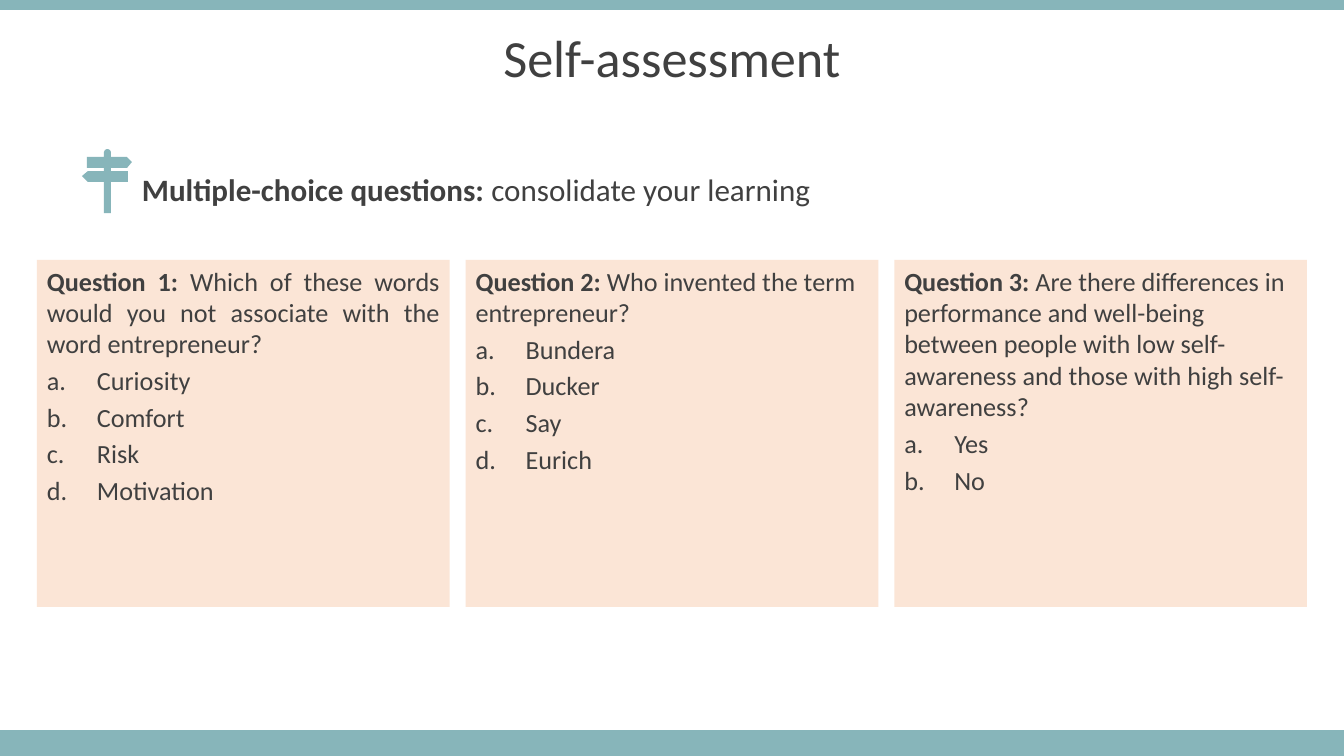
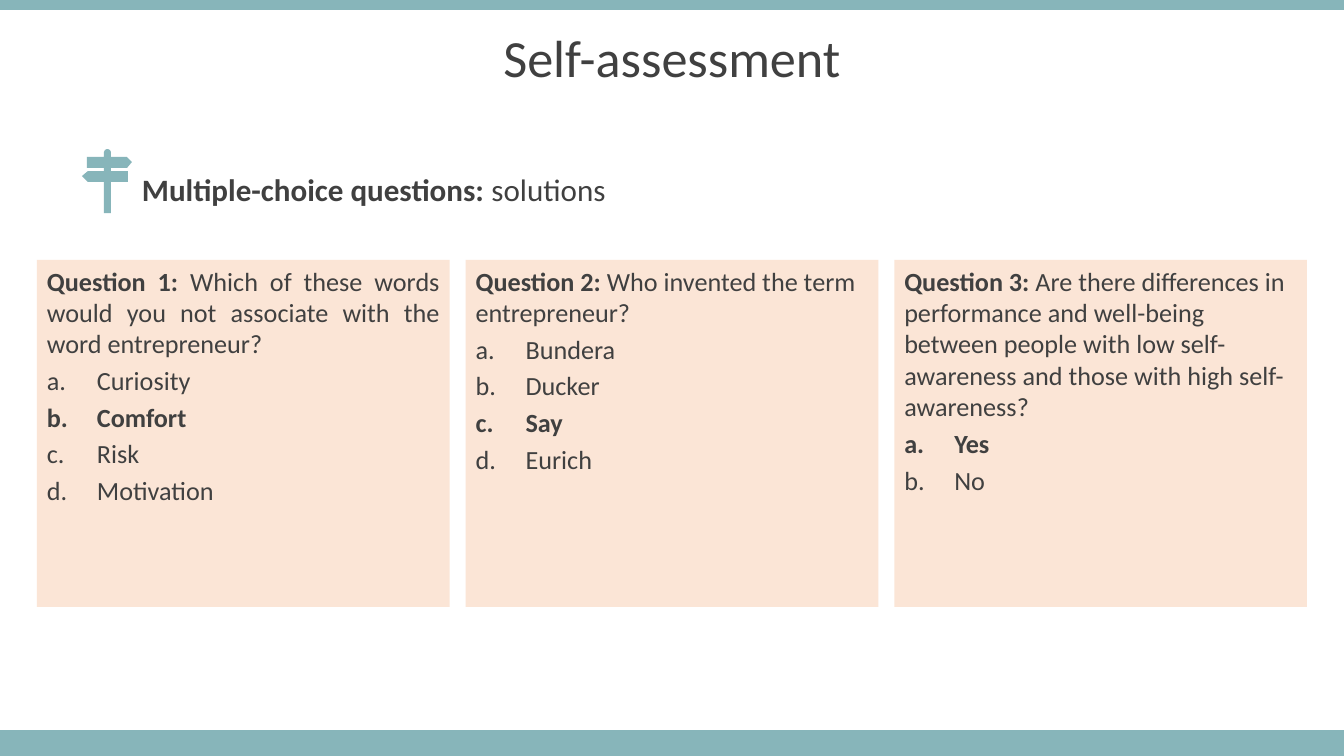
from lxml.etree import SubElement
from pptx import Presentation
from pptx.dml.color import RGBColor
from pptx.enum.shapes import MSO_SHAPE
from pptx.enum.text import MSO_ANCHOR as Anchor, PP_ALIGN as Align
from pptx.oxml.ns import qn
from pptx.util import Emu, Pt

# Shared look
SLIDE_WIDTH, SLIDE_HEIGHT = 1344, 756
EMU_PER_PX = 12192000 / SLIDE_WIDTH
TEAL = RGBColor(0x87, 0xB5, 0xBA)
PEACH = RGBColor(0xFB, 0xE5, 0xD6)
CHARCOAL = RGBColor(0x40, 0x40, 0x40)
FONT = "Calibri"
TITLE_SIZE, HEADING_SIZE, BODY_SIZE = 37.3, 22.2, 18.7
OPTION_INDENT = 50
CARD_GAP = 16

# Signpost outline, relative to its top left corner
SIGNPOST = [
    (22, 3), (23, 1), (25, 0), (26, 0), (28, 1), (29, 3),
    (29, 8), (45, 8), (50, 13), (45, 19), (29, 19),
    (29, 22), (46, 22), (46, 33), (29, 33), (29, 64),
    (22, 64), (22, 33), (6, 33), (0, 27), (6, 22),
    (22, 22), (22, 19), (5, 19), (5, 8), (22, 8),
]

# Question text, options, index of the right answer, alignment
QUESTIONS = [
    ("Which of these words would you not associate with the word entrepreneur?",
     ["Curiosity", "Comfort", "Risk", "Motivation"], 1, Align.JUSTIFY),
    ("Who invented the term entrepreneur?",
     ["Bundera", "Ducker", "Say", "Eurich"], 2, Align.LEFT),
    ("Are there differences in performance and well-being between people "
     "with low self-awareness and those with high self-awareness?",
     ["Yes", "No"], 0, Align.LEFT),
]


def px(length):
    return Emu(round(length * EMU_PER_PX))


def paint(shape, color):
    shape.shadow.inherit = False
    shape.fill.solid()
    shape.fill.fore_color.rgb = color
    shape.line.fill.background()


def add_rectangle(slide, box, color):
    shape = slide.shapes.add_shape(MSO_SHAPE.RECTANGLE, *map(px, box))
    paint(shape, color)
    return shape


def add_text_box(slide, box):
    frame = slide.shapes.add_textbox(*map(px, box)).text_frame
    frame.word_wrap = True
    frame.vertical_anchor = Anchor.MIDDLE
    return frame.paragraphs[0]


def style(paragraph, size, bold=False):
    font = paragraph.font
    font.name, font.size, font.bold = FONT, Pt(size), bold
    font.color.rgb = CHARCOAL


def write_labelled(paragraph, label, text, size):
    """Bold label followed by regular text."""
    style(paragraph, size)
    run = paragraph.add_run()
    run.text = label + ": "
    run.font.bold = True
    paragraph.add_run().text = text


def add_bands(slide):
    add_rectangle(slide, (0, 730, SLIDE_WIDTH, SLIDE_HEIGHT - 730), TEAL)
    add_rectangle(slide, (0, 0, SLIDE_WIDTH, 10), TEAL)


def add_title(slide, box, text):
    paragraph = add_text_box(slide, box)
    paragraph.text = text
    paragraph.alignment = Align.CENTER
    paragraph.line_spacing = 0.9
    style(paragraph, TITLE_SIZE)


def add_heading(slide, box, text):
    """Signpost icon with the heading to its right."""
    left, top, width, height = box
    builder = slide.shapes.build_freeform(*SIGNPOST[0], scale=EMU_PER_PX)
    builder.add_line_segments(SIGNPOST[1:], close=True)
    paint(builder.convert_to_shape(px(left), px(top)), TEAL)

    paragraph = add_text_box(slide, (left + 50, top + 23, width - 50, height - 23))
    paragraph.line_spacing = 0.8
    write_labelled(paragraph, "Multiple-choice questions", text, HEADING_SIZE)


def add_option(frame, text, bold):
    paragraph = frame.add_paragraph()
    paragraph.text = text
    paragraph.alignment = Align.LEFT
    paragraph.space_before = Pt(BODY_SIZE * 0.2)
    # Lettered list with a hanging indent
    properties = paragraph._p.get_or_add_pPr()
    properties.set("marL", str(px(OPTION_INDENT)))
    properties.set("indent", str(-px(OPTION_INDENT)))
    SubElement(properties, qn("a:buAutoNum"), type="alphaLcPeriod")
    style(paragraph, BODY_SIZE, bold)


def add_question_card(slide, box, number, question, show_answer):
    text, options, answer, alignment = question
    frame = add_rectangle(slide, box, PEACH).text_frame
    frame.word_wrap = True
    frame.vertical_anchor = Anchor.TOP
    paragraph = frame.paragraphs[0]
    paragraph.alignment = alignment
    write_labelled(paragraph, f"Question {number}", text, BODY_SIZE)
    for index, option in enumerate(options):
        add_option(frame, option, show_answer and index == answer)


def add_question_row(slide, box, show_answers):
    left, top, width, height = box
    card_width = (width + CARD_GAP) / len(QUESTIONS) - CARD_GAP
    for index, question in enumerate(QUESTIONS):
        card_left = left + index * (card_width + CARD_GAP)
        add_question_card(slide, (card_left, top, card_width, height),
                          index + 1, question, show_answers)


def add_quiz_slide(presentation, heading, show_answers):
    slide = presentation.slides.add_slide(presentation.slide_layouts[6])
    add_bands(slide)
    add_title(slide, (0, 18, SLIDE_WIDTH, 85), "Self-assessment")
    add_heading(slide, (82, 149, 949, 64), heading)
    add_question_row(slide, (37, 260, 1270, 347), show_answers)


def main():
    presentation = Presentation()
    presentation.slide_width = px(SLIDE_WIDTH)
    presentation.slide_height = px(SLIDE_HEIGHT)
    add_quiz_slide(presentation, "consolidate your learning", show_answers=False)
    add_quiz_slide(presentation, "solutions", show_answers=True)
    presentation.save("out.pptx")


if __name__ == "__main__":
    main()
